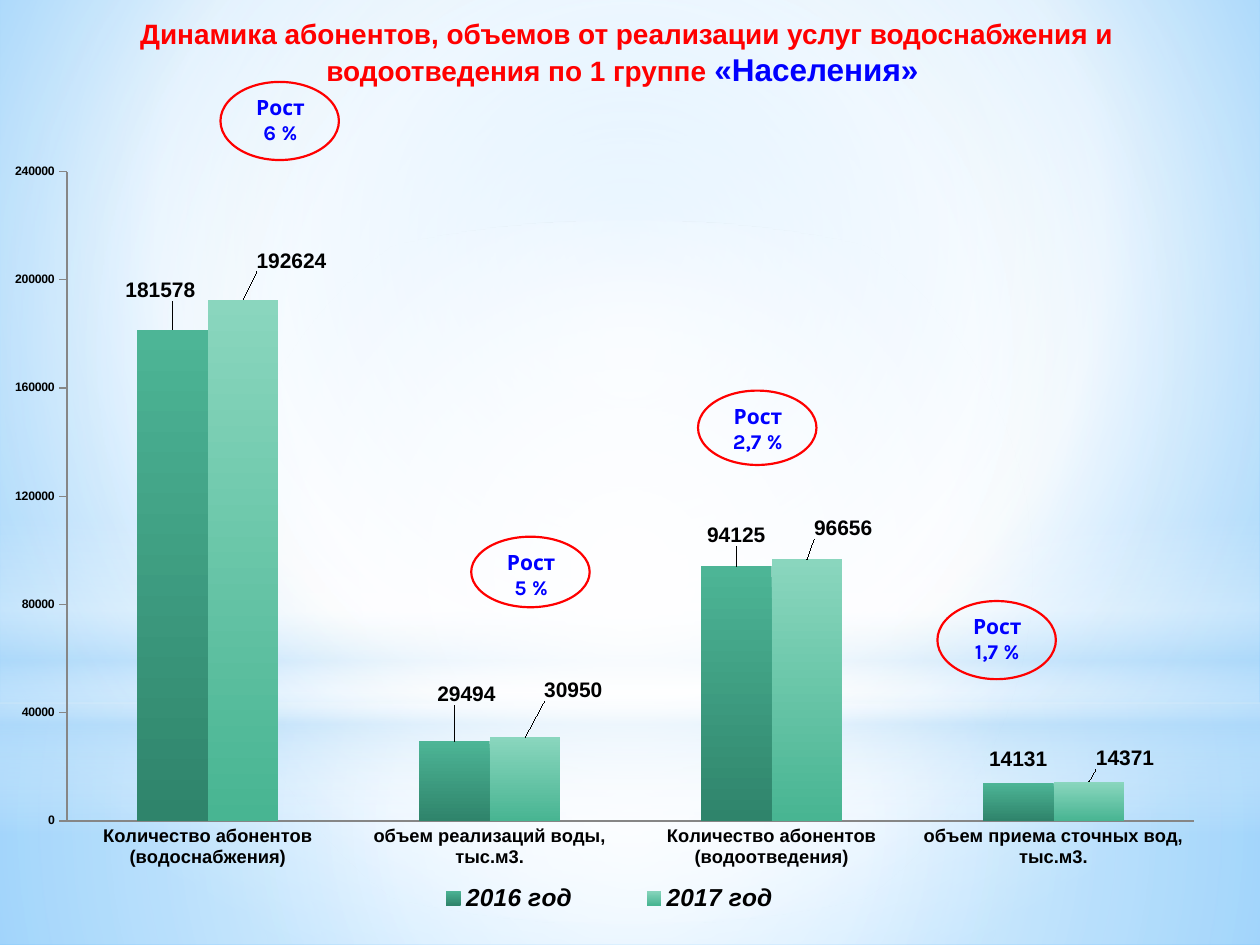
from lxml import etree
from pptx import Presentation
from pptx.chart import data
from pptx.dml.color import RGBColor
from pptx.enum import chart as ce, shapes, text
from pptx.oxml import parse_xml
from pptx.oxml.ns import nsdecls, qn
from pptx.util import Inches, Pt

rgb = RGBColor.from_string


def set_gradient(fill, parent, stops, to=None):
    """Fill with (position, colour, opacity) stops: circular if `to` is given, else downwards."""
    fill.solid()
    gs = "".join(
        f'<a:gs pos="{pos * 1000}"><a:srgbClr val="{c}"><a:alpha val="{a * 1000}"/></a:srgbClr></a:gs>'
        for pos, c, a in stops)
    if to:
        sides = " ".join(f'{k}="{v * 1000}"' for k, v in zip("ltrb", to))
        kind = f'<a:path path="circle"><a:fillToRect {sides}/></a:path>'
    else:
        kind = '<a:lin ang="5400000" scaled="0"/>'
    old = parent.find(qn("a:solidFill"))
    parent.replace(old, parse_xml(
        f'<a:gradFill {nsdecls("a")} rotWithShape="1"><a:gsLst>{gs}</a:gsLst>{kind}</a:gradFill>'))


def add_layout(after, **values):
    """Insert a manual chart layout after an element."""
    layout = etree.Element(qn("c:layout"))
    manual = etree.SubElement(layout, qn("c:manualLayout"))
    for tag, val in values.items():
        etree.SubElement(manual, qn(f"c:{tag}")).set("val", str(val))
    after.addnext(layout)


prs = Presentation()
prs.slide_width, prs.slide_height = Inches(10), Inches(7.5)
s = prs.slides.add_slide(prs.slide_layouts[5])

# Background glow
fill = s.background.fill
fill.solid()
set_gradient(fill, s.element.xpath(".//p:bgPr")[0],
             [(0, "9ED5FF", 100), (60, "FFFFFF", 100), (100, "5BB9FF", 100)], (20, 10, 20, 60))
RECT, OVAL = shapes.MSO_SHAPE.RECTANGLE, shapes.MSO_SHAPE.OVAL
centre = (50, 50, 50, 50)
for kind, top, height, stops, to in [
    (RECT, 5.58, 1.92, [(0, "FFFFFF", 91), (37, "FFFFFF", 76), (100, "B4DCFA", 79)], centre),
    (RECT, 0, 5.58, [(0, "FFFFFF", 89), (48, "FFFFFF", 62), (100, "B4DCFA", 79)], centre),
    (RECT, 4.12, 2.5, [(0, "FFFFFF", 0), (29, "FFFFFF", 30), (45, "B4DCFA", 40),
                       (55, "FFFFFF", 26), (65, "B4DCFA", 60), (100, "FFFFFF", 0)], None),
    (OVAL, 1.75, 5.58, [(0, "FFFFFF", 100), (56, "FFFFFF", 0)], centre),
]:
    sp = s.shapes.add_shape(kind, 0, Inches(top), Inches(10), Inches(height))
    sp.shadow.inherit = False
    sp.line.fill.background()
    set_gradient(sp.fill, sp.element.spPr, stops, to)

# Column chart
cd = data.CategoryChartData()
cd.categories = ["Количество абонентов (водоснабжения)", "объем реализаций воды, тыс.м3.",
                 "Количество абонентов (водоотведения)", "объем приема сточных вод, тыс.м3."]
cd.add_series("2016 год", [181578, 29494, 94125, 14131])
cd.add_series("2017 год", [192624, 30950, 96656, 14371])
chart = s.shapes.add_chart(ce.XL_CHART_TYPE.COLUMN_CLUSTERED, Inches(0.12), Inches(1.31),
                           Inches(9.61), Inches(6.06), cd).chart
chart.has_title = False
for key, val in {"name": "Arial", "size": Pt(12), "bold": True}.items():
    setattr(chart.font, key, val)
chart.font.color.rgb = rgb("000000")
plot_area = chart.element.xpath(".//c:plotArea")[0]
for old in plot_area.findall(qn("c:layout")):
    plot_area.remove(old)
marker = etree.Element(qn("c:layout"))
plot_area.insert(0, marker)
add_layout(marker, layoutTarget="inner", xMode="edge", yMode="edge", x=0.041, y=0.008, w=0.933, h=0.851)
plot_area.remove(marker)

# Axes
tick = ce.XL_TICK_MARK
for axis, size, mark in [(chart.category_axis, 10.5, tick.NONE), (chart.value_axis, 7, tick.OUTSIDE)]:
    for key, val in {"has_major_gridlines": False, "major_tick_mark": mark,
                     "minor_tick_mark": tick.NONE}.items():
        setattr(axis, key, val)
    axis.tick_labels.font.size = Pt(size)
    axis.tick_labels.font.bold = True
    axis.format.line.color.rgb = rgb("868686")
for key, val in {"minimum_scale": 0, "maximum_scale": 240000, "major_unit": 40000}.items():
    setattr(chart.value_axis, key, val)

# Series colours and shifted value labels
plot = chart.plots[0]
plot.gap_width, plot.overlap, plot.vary_by_categories = 199, 0, False
styles = [
    (("4DB596", "2F846B"), [(-0.01, -0.03), (0.01, -0.04), (0, -0.02), (0, -0.01)]),
    (("8AD6BE", "48B592"), [(0.04, -0.03), (0.04, -0.04), (0.03, -0.02), (0.03, -0.01)]),
]
for ser, ((light, dark), shifts) in zip(plot.series, styles):
    ser.format.fill.solid()
    set_gradient(ser.format.fill, ser._element.find(qn("c:spPr")), [(0, light, 100), (100, dark, 100)])
    ser.data_labels.show_value = True
    for i, (dx, dy) in enumerate(shifts):
        ser.points[i].data_label.position = ce.XL_LABEL_POSITION.OUTSIDE_END
    for label, (dx, dy) in zip(ser._element.xpath(".//c:dLbl"), shifts):
        add_layout(label.find(qn("c:idx")), x=dx, y=dy)

# Legend
chart.has_legend = True
legend = chart.legend
legend.position = ce.XL_LEGEND_POSITION.BOTTOM
legend.include_in_layout = False
for key, val in {"size": Pt(14), "bold": True, "italic": True}.items():
    setattr(legend.font, key, val)
for old in legend._element.findall(qn("c:layout")):
    legend._element.remove(old)
add_layout(legend._element.find(qn("c:legendPos")), xMode="edge", yMode="edge",
           x=0.3, y=0.93, w=0.38, h=0.06)

# Title, in front of the background shapes
title = s.shapes.title
title.element.getparent().append(title.element)
for key, val in {"left": 0.36, "top": 0.08, "width": 9.23, "height": 0.67}.items():
    setattr(title, key, Inches(val))
tf = title.text_frame
tf.word_wrap, tf.auto_size = True, text.MSO_AUTO_SIZE.NONE
tf.vertical_anchor = text.MSO_ANCHOR.TOP
p = tf.paragraphs[0]
p.alignment = text.PP_ALIGN.CENTER
for words, size, colour in [
    ("Динамика абонентов, объемов от реализации услуг водоснабжения и водоотведения по 1 группе ",
     16, "FF0000"),
    ("«Населения» ", 18, "0000FF"),
]:
    r = p.add_run()
    r.text = words
    for key, val in {"name": "Arial", "size": Pt(size), "bold": True}.items():
        setattr(r.font, key, val)
    r.font.color.rgb = rgb(colour)

# Growth badges
for left, top, height, growth in [(1.75, 0.65, 0.62, "6 %"), (3.74, 4.26, 0.56, "5 %"),
                                  (5.54, 3.1, 0.59, "2,7 %"), (7.44, 4.77, 0.62, "1,7 %")]:
    badge = s.shapes.add_group_shape()
    sp = badge.shapes.add_shape(OVAL, Inches(left), Inches(top), Inches(0.94), Inches(height))
    sp.shadow.inherit = False
    sp.fill.background()
    sp.line.color.rgb = rgb("FF0000")
    sp.line.width = Pt(1.25)
    tf = badge.shapes.add_textbox(Inches(left + 0.12), Inches(top + 0.05),
                                  Inches(0.71), Inches(height + 0.04)).text_frame
    tf.word_wrap = True
    p = tf.paragraphs[0]
    p.alignment = text.PP_ALIGN.CENTER
    r = p.add_run()
    r.text = f"Рост {growth}"
    for key, val in {"name": "Karla", "size": Pt(12), "bold": True}.items():
        setattr(r.font, key, val)
    r.font.color.rgb = rgb("0000FF")

prs.save("out.pptx")
